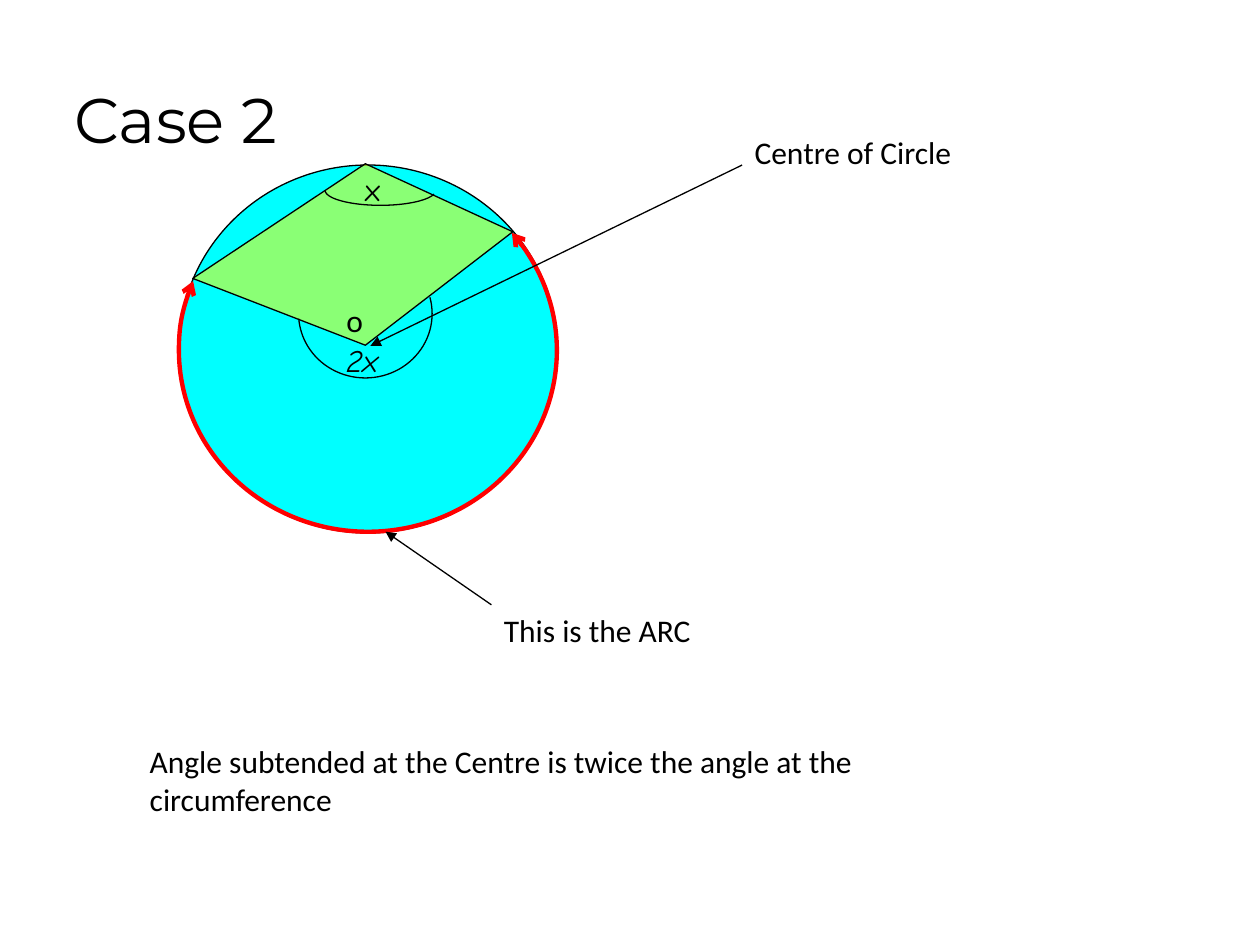
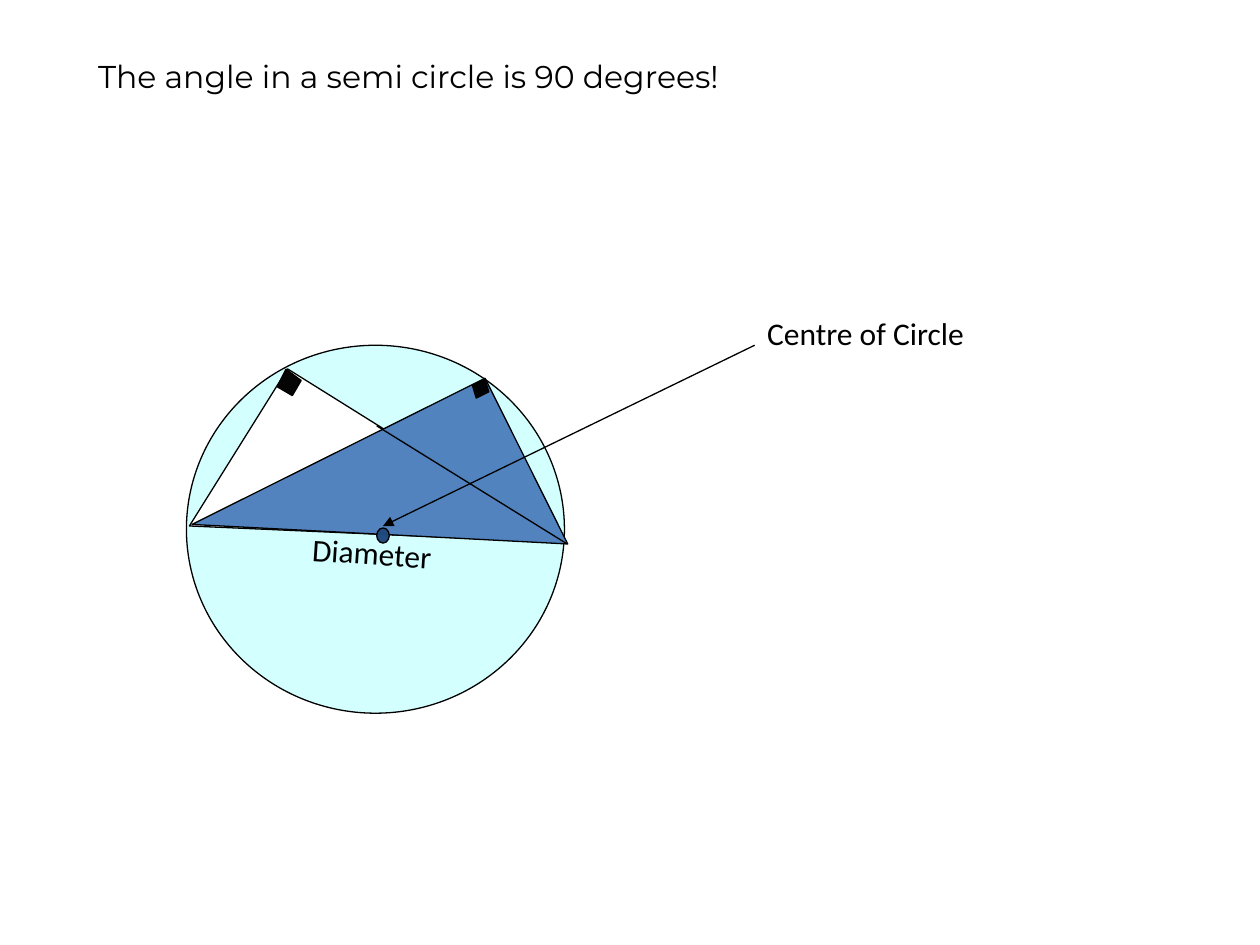
from dataclasses import dataclass
from math import atan2, degrees

from lxml.etree import SubElement
from pptx import Presentation
from pptx.dml.color import RGBColor
from pptx.enum.shapes import MSO_CONNECTOR, MSO_SHAPE
from pptx.enum.text import PP_ALIGN
from pptx.oxml.ns import qn
from pptx.util import Inches, Pt


@dataclass(frozen=True)
class Theme:
    ink: str = "000000"
    paper: str = "FFFFFF"
    cyan: str = "00FFFF"
    yellow: str = "FFFF00"
    red: str = "FF0000"
    blue: str = "4F81BD"
    navy: str = "1F497D"
    body: str = "Calibri"
    maths: str = "Comic Neue"
    head: str = "Montserrat"
    small: int = 18
    large: int = 36
    thin: float = 0.75
    thick: float = 2.5


THEME = Theme()

# The slide is a grid of 100 columns by 75 rows; every length is in cells.
COLS, ROWS, CELL = 100, 75, 0.1
ROUND = (30, 29.2)      # size of the big circle
LABEL = (29.1, 4)       # size of a label box
REACH = (-29.5, 14.35)  # from the centre label to the centre

CASE = {
    "title": ("Case 2", (4.9, 5.9, 18.5, 7.1), THEME.large),
    "circle": (14.2, 13.1),
    "kite": [(15.3, 22.1), (29, 27.4), (40.7, 18.4), (29, 13)],
    # middle, radii, first point, last point (clockwise)
    "angles": [((29, 24.9), (5.3, 5.1), (34.1, 23.6), (23.7, 25.3)),
               ((30.2, 15.1), (4.4, 1.2), (34.3, 15.4), (25.8, 15.1))],
    "arc": ((29.2, 27.8), (15, 14.4), (40.6, 18.5), (15.3, 22.3)),
    # words, box, font, italic
    "marks": [("2x", (26.5, 26.6, 7.8, 4), THEME.maths, True),
              ("x", (28, 13, 4.1, 4), THEME.maths, False),
              ("o", (26.5, 23.4, 4.1, 4), THEME.body, False)],
    "centre": (58.9, 13.1),
    "note": ("This is the ARC", (39, 48), (30.6, 42.2)),
    "rule": ("Angle subtended at the Centre is twice the angle "
             "at the circumference", (10.9, 58.4, 66.4, 7)),
}

SEMI = {
    "title": ("The angle in a semi circle is 90 degrees!",
              (6.8, 4, 58.4, 25.3), THEME.small),
    "circle": (14.8, 27.4),
    # left, top, turn, flip, fill, alpha
    "wedges": [(22.6, 29.4, 122, False, THEME.paper, 100),
               (22.8, 29.4, 243.5, True, THEME.blue, 98)],
    "wedge": (14.7, 26),
    "chord": ((44.9, 43.1), (29.9, 33.8)),
    "dot": (29.9, 41.9, 1, 1.2),
    "squares": [[(22.7, 29.3), (23.9, 30.2), (22, 30.7)],
                [(38.5, 30.1), (37.5, 30.6), (37.8, 31.6), (38.8, 31.1)]],
    "centre": (59.9, 27.4),
    "span": ("Diameter", (23.8, 41.9, 12.2, 4), 3.9),
}
SEMI["squares"][0] = [(22.7, 29.3), (23.9, 30.2), (23.2, 31.4), (22, 30.7)]


def cells(*sizes):
    return [Inches(size * CELL) for size in sizes]


def style(shape, fill=None, alpha=100, line=THEME.ink, width=THEME.thin):
    shape.shadow.inherit = False
    if fill:
        shape.fill.solid()
        shape.fill.fore_color.rgb = RGBColor.from_string(fill)
        if alpha < 100:
            tint = shape.element.spPr.find(qn("a:solidFill"))[0]
            SubElement(tint, qn("a:alpha"), val=str(alpha * 1000))
    else:
        shape.fill.background()
    pen(shape, line, width)
    return shape


def pen(shape, line=THEME.ink, width=THEME.thin):
    shape.line.color.rgb = RGBColor.from_string(line)
    shape.line.width = Pt(width)


def tip(shape, end, kind):
    """Put an arrowhead on one end; headEnd must come before tailEnd."""
    SubElement(shape.line._get_or_add_ln(), qn(f"a:{end}"), type=kind)


def oval(slide, box, fill, alpha=100):
    shape = slide.shapes.add_shape(MSO_SHAPE.OVAL, *cells(*box))
    return style(shape, fill, alpha)


def shell(slide, dots, fill, alpha):
    """Draw a closed outline through the dots."""
    first, *rest = [cells(*dot) for dot in dots]
    path = slide.shapes.build_freeform(*first)
    path.add_line_segments(rest, close=True)
    return style(path.convert_to_shape(), fill, alpha)


def arc(slide, mid, radii, first, last, **look):
    """Draw part of an ellipse, clockwise from first to last."""
    (x, y), (rx, ry) = mid, radii
    shape = slide.shapes.add_shape(
        MSO_SHAPE.ARC, *cells(x - rx, y - ry, 2 * rx, 2 * ry))
    for i, (px, py) in enumerate((first, last)):
        turn = degrees(atan2(py - y, px - x)) % 360
        shape.adjustments[i] = turn * 0.6  # 60000 units a degree, over 100000
    return style(shape, **look)


def line(slide, start, end):
    shape = slide.shapes.add_connector(
        MSO_CONNECTOR.STRAIGHT, *cells(*start, *end))
    pen(shape)
    SubElement(shape.element.spPr, qn("a:effectLst"))
    return shape


def text(slide, words, box, font=THEME.body, size=THEME.small,
         italic=False, wrap=True):
    shape = slide.shapes.add_textbox(*cells(*box))
    frame = shape.text_frame
    frame.word_wrap = wrap
    frame.text = words
    frame.paragraphs[0].alignment = PP_ALIGN.LEFT
    face = frame.paragraphs[0].runs[0].font
    face.name, face.size, face.italic = font, Pt(size), italic
    face.color.rgb = RGBColor.from_string(THEME.ink)
    return shape


def callout(slide, words, start, end):
    """Label whose lead line starts at its lower left."""
    tip(line(slide, start, end), "tailEnd", "triangle")
    x, y = start
    rise = 3 if end[1] > y else 0
    text(slide, words, (x, y - rise, *LABEL))


def begin(deck, data, alpha):
    """Add a slide with its title and big circle."""
    slide = deck.slides.add_slide(deck.slide_layouts[6])
    words, box, size = data["title"]
    oval(slide, (*data["circle"], *ROUND), THEME.cyan, alpha)
    text(slide, words, box, THEME.head, size, wrap=False)
    return slide


def centre(slide, start):
    end = [a + b for a, b in zip(start, REACH)]
    callout(slide, "Centre of Circle", start, end)


def case(deck):
    slide = begin(deck, CASE, 100)
    shell(slide, CASE["kite"], THEME.yellow, 54)
    for angle in CASE["angles"]:
        arc(slide, *angle)
    bow = arc(slide, *CASE["arc"], line=THEME.red, width=THEME.thick)
    for end in ("headEnd", "tailEnd"):
        tip(bow, end, "arrow")
    for words, box, font, italic in CASE["marks"]:
        text(slide, words, box, font, italic=italic)
    callout(slide, *CASE["note"])
    centre(slide, CASE["centre"])
    text(slide, *CASE["rule"])


def semi(deck):
    slide = begin(deck, SEMI, 17)
    for x, y, turn, flip, fill, alpha in SEMI["wedges"]:
        shape = slide.shapes.add_shape(
            MSO_SHAPE.RIGHT_TRIANGLE, *cells(x, y, *SEMI["wedge"]))
        shape.rotation = turn
        if flip:
            shape.element.spPr.xfrm.set("flipH", "1")
        style(shape, fill, alpha)
    line(slide, *SEMI["chord"])
    oval(slide, SEMI["dot"], THEME.navy, 98)
    centre(slide, SEMI["centre"])
    for dots in SEMI["squares"]:
        shell(slide, dots, THEME.ink, 98)
    words, box, turn = SEMI["span"]
    text(slide, words, box, wrap=False).rotation = turn


def main():
    deck = Presentation()
    deck.slide_width, deck.slide_height = cells(COLS, ROWS)
    case(deck)
    semi(deck)
    deck.save("out.pptx")


if __name__ == "__main__":
    main()
